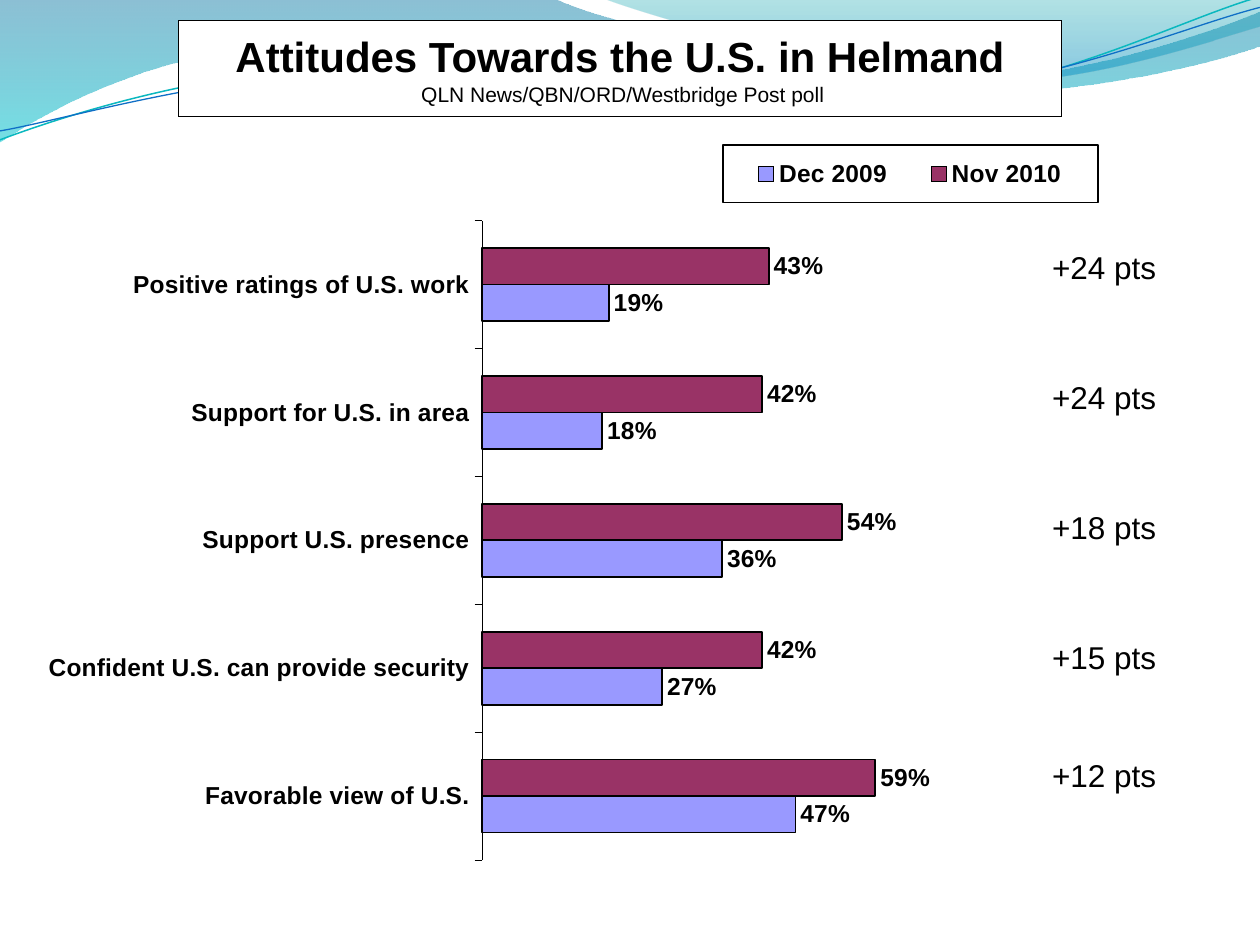
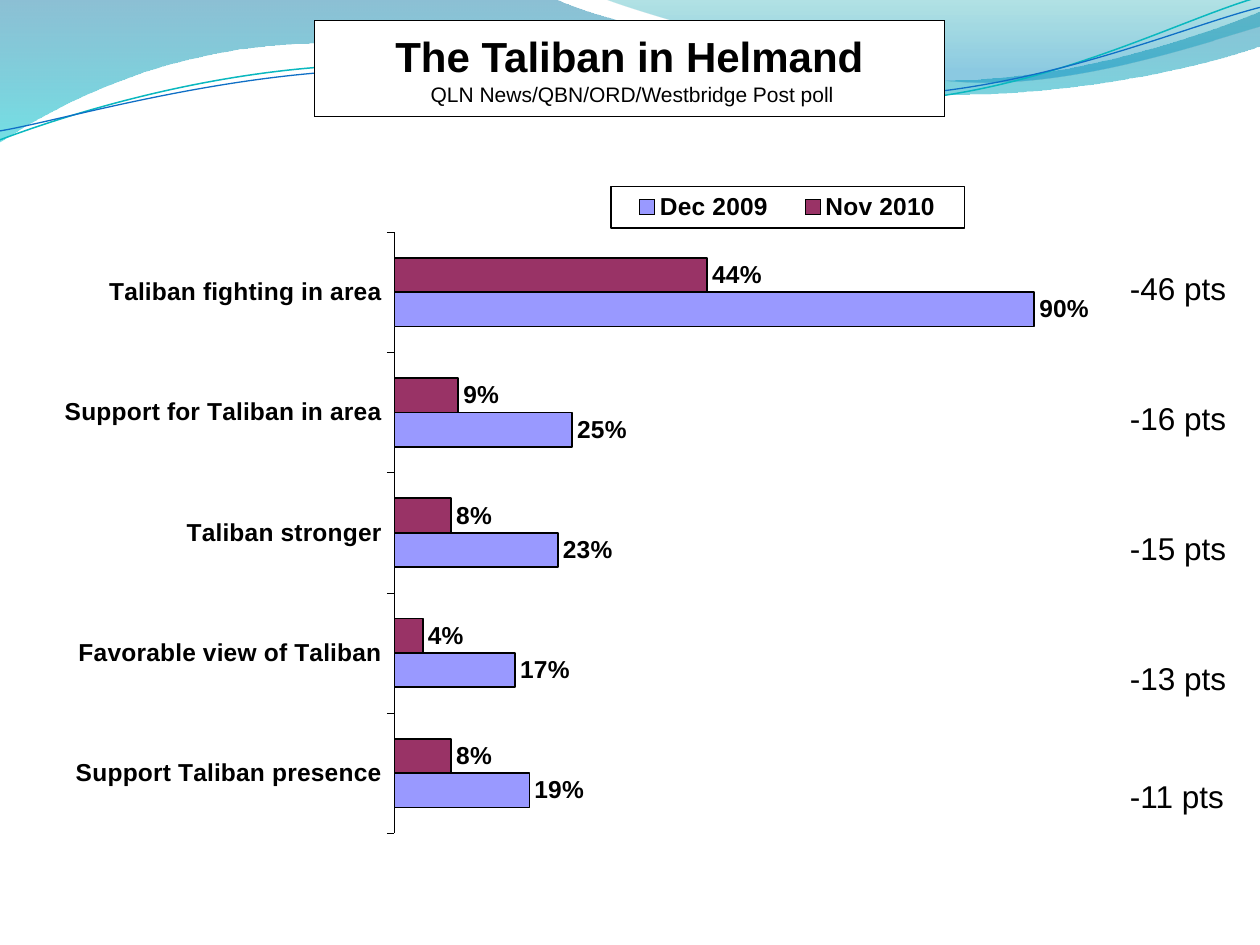
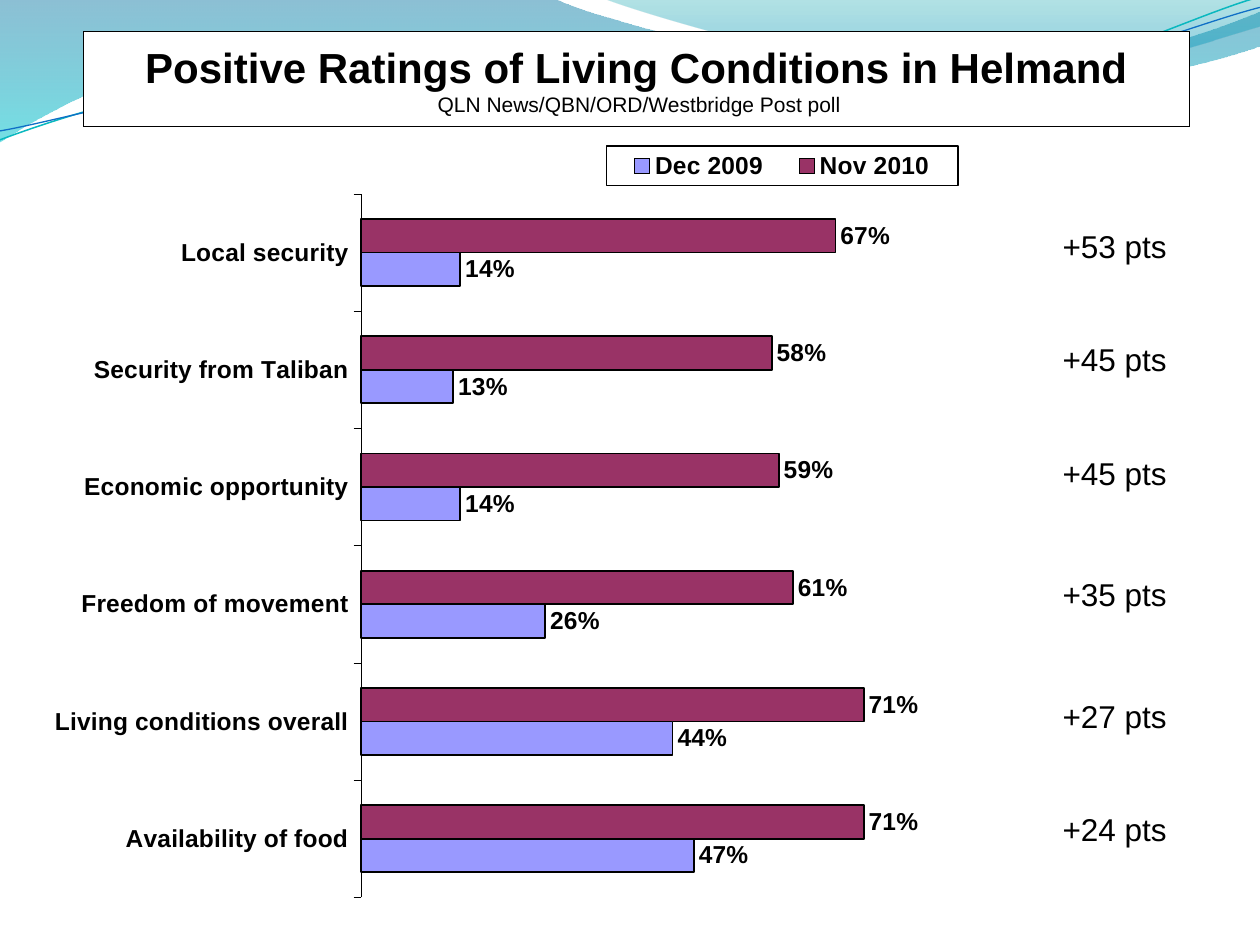
from pptx import Presentation, oxml
from pptx import util as u
from pptx.chart import data
from pptx.dml import color
from pptx.enum import chart as ch
from pptx.enum import text
from pptx.oxml import ns

Cm, Pt = u.Cm, u.Pt
FONT = "Arial"
BLACK, WHITE = "000000", "FFFFFF"
SERIES_COLORS = {"Nov 2010": "993366", "Dec 2009": "9999FF"}
SOURCE = " QLN News/QBN/ORD/Westbridge Post poll"

# Wave outlines in cm: two numbers are a straight step, six a curve
BROAD_WAVE = [(0, 0), (11.18, -0.03), (12.09, 0.43, 16.87, 1.6, 19.25, 1.6),
              (21.67, 1.6, 24.33, 0.66, 25.4, 0.23), (25.43, 0.91),
              (24.97, 1.12, 22.1, 1.93, 18.95, 1.91),
              (15.8, 1.91, 9.7, 0.71, 6.53, 0.86),
              (3.28, 0.91, 1.17, 2.11, -0.03, 2.87)]
RIGHT_WAVE = [(12.17, -0.03), (12.93, 0.28, 17.32, 1.57, 19.53, 1.65),
              (21.74, 1.75, 24.41, 0.81, 25.4, 0.53), (25.4, 0)]
TEAL_LINE = [(0, 2.82), (1.22, 2.36, 4.01, 1.45, 7.04, 1.32),
             (10.03, 1.19, 15.06, 2.26, 18.11, 2.03),
             (21.16, 1.8, 23.83, 0.38, 25.35, -0.05)]
BLUE_LINE = [(0, 2.64), (1.19, 2.44, 4.17, 1.55, 7.19, 1.42),
             (10.24, 1.3, 15.16, 2.13, 18.21, 1.91),
             (21.23, 1.7, 23.9, 0.53, 25.4, 0.15)]

# Boxes are left, top, width, height in cm
SLIDES = [
    dict(title="Attitudes Towards the U.S. in Helmand",
         title_box=(3.6, 0.42, 17.8, 1.93),
         chart_box=(0, 2.54, 25.4, 16.51),
         plot_box=(9.72, 4.45, 14.78, 12.89),
         legend_box=(14.57, 2.93, 7.56, 1.15),
         rows=[("Positive ratings of U.S. work", 0.43, 0.19),
               ("Support for U.S. in area", 0.42, 0.18),
               ("Support U.S. presence", 0.54, 0.36),
               ("Confident U.S. can provide security", 0.42, 0.27),
               ("Favorable view of U.S.", 0.59, 0.47)],
         points_box=(20.96, 4.87, 3.5, 11.76),
         gaps=[0, 52.8, 52.8, 52.8, 45.8]),
    dict(title="The Taliban in Helmand",
         title_box=(6.34, 0.42, 12.7, 1.93),
         chart_box=(0.64, 3.18, 23.93, 15.34),
         plot_box=(7.95, 4.68, 15.77, 12.12),
         legend_box=(12.31, 3.76, 7.13, 0.83),
         rows=[("Taliban fighting in area", 0.44, 0.9),
               ("Support for Taliban in area", 0.09, 0.25),
               ("Taliban stronger", 0.08, 0.23),
               ("Favorable view of Taliban", 0.04, 0.17),
               ("Support Taliban presence", 0.08, 0.19)],
         points_box=(22.53, 5.29, 3.5, 11.76),
         gaps=[0, 52.8, 52.8, 52.8, 45.8]),
    dict(title="Positive Ratings of Living Conditions in Helmand",
         title_box=(1.69, 0.63, 22.28, 1.93),
         chart_box=(0, 2.34, 23.83, 16.21),
         plot_box=(7.28, 3.91, 15.7, 14.18),
         legend_box=(12.23, 2.95, 7.08, 0.79),
         rows=[("Local security", 0.67, 0.14),
               ("Security from Taliban", 0.58, 0.13),
               ("Economic opportunity", 0.59, 0.14),
               ("Freedom of movement", 0.61, 0.26),
               ("Living conditions overall", 0.71, 0.44),
               ("Availability of food", 0.71, 0.47)],
         points_box=(21.17, 4.45, 3.5, 11.91),
         gaps=[0, 43.2, 43.2, 47.8, 47.8, 43.2]),
]


def rgb(value):
    return color.RGBColor.from_string(value)


def style_font(font, size, bold=False):
    font.name, font.size, font.bold = FONT, Pt(size), bold
    font.color.rgb = rgb(BLACK)


def set_line(line, value, width):
    line.color.rgb = rgb(value)
    line.width = Pt(width)


def place(sp, box):
    sp.left, sp.top, sp.width, sp.height = map(Cm, box)


# --- Wave band, kept on the layout ---
def add_outline(s, outline, close):
    """Build a freeform, then join the three points of each curve."""
    points = [(Cm(step[i]), Cm(step[i + 1]))
              for step in outline for i in range(0, len(step), 2)]
    builder = s.shapes.build_freeform(*points[0])
    builder.add_line_segments(points[1:], close=close)
    sp = builder.convert_to_shape()
    sp.shadow.inherit = False
    segments = iter(list(sp.element.iter(ns.qn("a:lnTo"))))
    for step in outline[1:]:
        first = next(segments)
        if len(step) == 6:
            curve = oxml.parse_xml(f'<a:cubicBezTo {ns.nsdecls("a")}/>')
            first.addprevious(curve)
            for segment in (first, next(segments), next(segments)):
                curve.append(segment[0])
                segment.getparent().remove(segment)
    return sp


def add_wave(s, outline, stops):
    sp = add_outline(s, outline, True)
    sp.line.fill.background()
    sp.fill.gradient()
    sp.fill.gradient_angle = 270
    for stop, (position, value, _) in zip(sp.fill.gradient_stops, stops):
        stop.position = position
        stop.color.rgb = rgb(value)
    for clr, (_, _, opacity) in zip(sp.element.iter(ns.qn("a:srgbClr")), stops):
        clr.append(oxml.parse_xml(
            f'<a:alpha {ns.nsdecls("a")} val="{opacity * 1000}"/>'))
    return sp


def add_wave_line(s, outline, value, width):
    sp = add_outline(s, outline, False)
    sp.fill.background()
    set_line(sp.line, value, width)
    return sp


def add_band(s, layout):
    """Draw the waves, then move them behind everything on the layout."""
    band = [add_wave(s, BROAD_WAVE, [(0, "0074A1", 45), (1, "00C6CF", 55)]),
            add_wave(s, RIGHT_WAVE, [(0, "00A1A9", 30), (0.8, "008BBF", 45)]),
            add_wave_line(s, TEAL_LINE, "0AB8BF", 0.85),
            add_wave_line(s, BLUE_LINE, "0F6FC6", 0.75)]
    for i, sp in enumerate(band):
        next(sp.element.iter(ns.qn("p:cNvPr"))).set("id", str(100 + i))
        layout.shapes.element.insert(2 + i, sp.element)


# --- Title box ---
def add_title(s, title, box):
    sp = s.shapes.title
    place(sp, box)
    sp.fill.solid()
    sp.fill.fore_color.rgb = rgb(WHITE)
    set_line(sp.line, BLACK, 0)
    tf = sp.text_frame
    tf.text = f"{title}\n{SOURCE}"
    tf.auto_size = text.MSO_AUTO_SIZE.NONE
    tf.word_wrap = True
    tf.vertical_anchor = text.MSO_ANCHOR.MIDDLE
    tf.margin_left = tf.margin_right = Cm(0.15)
    tf.margin_top = tf.margin_bottom = Cm(0.1)
    for p, size, bold in zip(tf.paragraphs, (24, 12), (True, False)):
        p.alignment = text.PP_ALIGN.CENTER
        style_font(p.runs[0].font, size, bold)


# --- Bar chart ---
def manual_layout(box, chart_box, inner=False):
    """Layout element for a box, as fractions of the chart box."""
    left, top, width, height = chart_box
    parts = dict(x=(box[0] - left) / width, y=(box[1] - top) / height,
                 w=box[2] / width, h=box[3] / height)
    target = '<c:layoutTarget val="inner"/>' if inner else ""
    modes = "".join(f'<c:{k}Mode val="edge"/>' for k in "xy")
    sizes = "".join(f'<c:{k} val="{v:.4f}"/>' for k, v in parts.items())
    return oxml.parse_xml(f'<c:layout {ns.nsdecls("c")}><c:manualLayout>'
                          f'{target}{modes}{sizes}</c:manualLayout></c:layout>')


def shape_props(content):
    return oxml.parse_xml(f'<c:spPr {ns.nsdecls("c", "a")}>{content}</c:spPr>')


def drop_layout(element):
    for old in element.findall(ns.qn("c:layout")):
        element.remove(old)


def add_bars(s, rows, chart_box, plot_box, legend_box):
    cd = data.CategoryChartData(number_format="0%")
    names, *columns = zip(*rows)
    cd.categories = names
    for name, values in zip(SERIES_COLORS, columns):
        cd.add_series(name, values)
    chart = s.shapes.add_chart(ch.XL_CHART_TYPE.BAR_CLUSTERED,
                               *map(Cm, chart_box), cd).chart
    chart.has_title = False
    style_font(chart.font, 10)

    # Axes
    axis = chart.category_axis
    axis.reverse_order = True
    axis.major_tick_mark = ch.XL_TICK_MARK.OUTSIDE
    style_font(axis.tick_labels.font, 14, True)
    set_line(axis.format.line, BLACK, 0.25)
    values = chart.value_axis
    values.visible = values.has_major_gridlines = False
    values.minimum_scale, values.maximum_scale, values.major_unit = 0, 1.1, 0.1

    # Bars and labels
    plot = chart.plots[0]
    plot.gap_width, plot.overlap, plot.vary_by_categories = 150, 0, False
    for series in plot.series:
        series.format.fill.solid()
        series.format.fill.fore_color.rgb = rgb(SERIES_COLORS[series.name])
        set_line(series.format.line, BLACK, 1)
        labels = series.data_labels
        labels.show_value = True
        labels.number_format, labels.number_format_is_linked = "0%", False
        labels.position = ch.XL_LABEL_POSITION.OUTSIDE_END
        style_font(labels.font, 14, True)

    # Legend
    chart.has_legend = True
    legend = chart.legend
    legend.position = ch.XL_LEGEND_POSITION.RIGHT
    legend.include_in_layout = False
    style_font(legend.font, 14, True)

    # Manual places, legend border and clear background
    root = chart.element
    lg = next(root.iter(ns.qn("c:legend")))
    drop_layout(lg)
    lg.find(ns.qn("c:legendPos")).addnext(manual_layout(legend_box, chart_box))
    lg.find(ns.qn("c:overlay")).addnext(shape_props(
        '<a:solidFill><a:srgbClr val="FFFFFF"/></a:solidFill><a:ln w="12700">'
        '<a:solidFill><a:srgbClr val="000000"/></a:solidFill></a:ln>'))
    area = next(root.iter(ns.qn("c:plotArea")))
    drop_layout(area)
    area.insert(0, manual_layout(plot_box, chart_box, inner=True))
    root.find(ns.qn("c:chart")).addnext(
        shape_props("<a:noFill/><a:ln><a:noFill/></a:ln>"))


# --- Change in points beside the bars ---
def add_points(s, rows, box, gaps):
    tf = s.shapes.add_textbox(*map(Cm, box)).text_frame
    tf.word_wrap = True
    tf.text = "\n".join(f"{round((now - before) * 100):+d} pts"
                        for _, now, before in rows)
    for p, gap in zip(tf.paragraphs, gaps):
        p.space_before = Pt(gap)
        style_font(p.runs[0].font, 18)


def add_poll_slide(s, title, title_box, chart_box, plot_box, legend_box,
                   rows, points_box, gaps):
    add_title(s, title, title_box)
    add_bars(s, rows, chart_box, plot_box, legend_box)
    add_points(s, rows, points_box, gaps)


def main():
    prs = Presentation()
    prs.slide_width, prs.slide_height = Cm(25.4), Cm(19.05)
    layout = prs.slide_layouts.get_by_name("Title Only")
    for content in SLIDES:
        add_poll_slide(prs.slides.add_slide(layout), **content)
    add_band(prs.slides[0], layout)
    prs.save("out.pptx")


if __name__ == "__main__":
    main()
